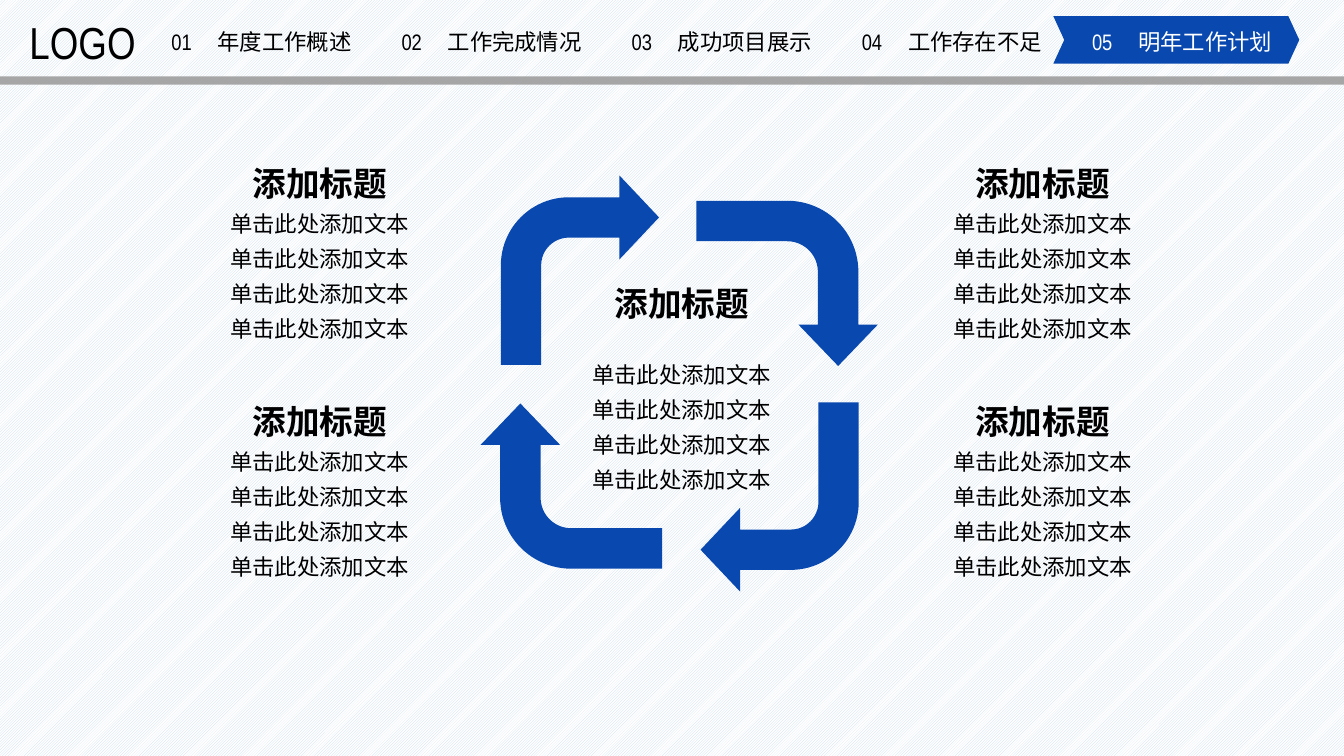
from itertools import product
from lxml.etree import SubElement
from pptx import Presentation
from pptx.dml.color import RGBColor as RGB
from pptx.enum.dml import MSO_PATTERN as Pattern
from pptx.enum.shapes import MSO_SHAPE as Shape
from pptx.enum.text import MSO_ANCHOR as Anchor, MSO_AUTO_SIZE as Fit, PP_ALIGN as Align
from pptx.oxml.ns import qn
from pptx.util import Pt

COLORS = {"blue": "0848AF", "gray": "A6A6A6", "sky": "C6D9F1",
          "white": "FFFFFF", "black": "000000"}
LATIN, HAN = "Arial Narrow", "Noto Sans CJK SC"
TABS = ["年度工作概述", "工作完成情况", "成功项目展示", "工作存在不足", "明年工作计划"]
TITLE, LINE = "添加标题", "单击此处添加文本"


def color(name):
    return RGB.from_string(COLORS[name])


def add_run(para, text, size, face=HAN, tint="black", bold=False):
    run = para.add_run()
    run.text = text
    font = run.font
    font.size, font.bold = Pt(size), bold
    font.color.rgb = color(tint)
    font.name = face
    SubElement(font._element, qn("a:ea"), typeface=face)


def add_box(slide, x, y, w, h, pad=(0, 0), anchor=Anchor.MIDDLE):
    """Add an empty text box and return its frame."""
    frame = slide.shapes.add_textbox(Pt(x), Pt(y), Pt(w), Pt(h)).text_frame
    frame.word_wrap = True
    frame.auto_size = Fit.SHAPE_TO_FIT_TEXT
    frame.vertical_anchor = anchor
    frame.margin_left = frame.margin_right = Pt(pad[0])
    frame.margin_top = frame.margin_bottom = Pt(pad[1])
    return frame


def add_form(slide, kind, x, y, w, h, tint, turn=0, adjust=()):
    form = slide.shapes.add_shape(kind, Pt(x), Pt(y), Pt(w), Pt(h))
    form.shadow.inherit = False
    form.fill.solid()
    form.fill.fore_color.rgb = color(tint)
    form.line.fill.background()
    form.rotation = turn
    for i, value in enumerate(adjust):
        form.adjustments[i] = value


def add_tab(slide, x, y, num, label, tint):
    para = add_box(slide, x, y, 143, 19.4).paragraphs[0]
    stops = SubElement(para._p.get_or_add_pPr(), qn("a:tabLst"))
    SubElement(stops, qn("a:tab"), pos=str(Pt(33)), algn="l")
    add_run(para, f"{num:02d}\t", 16, LATIN, tint)
    add_run(para, label, 16, HAN, tint)


def add_header(slide, x, y, w, active):
    """Draw the logo word, the section tabs and the rule below them."""
    add_form(slide, Shape.RECTANGLE, x, y + 54.6, w, 5.8, "gray")
    add_form(slide, Shape.CHEVRON, x + 752.4, y + 11.5, 175.7, 34, "blue", adjust=[0.23])
    logo = add_box(slide, x + 21, y + 11, 79, 38)
    add_run(logo.paragraphs[0], "LOGO", 32, LATIN)
    for i, label in enumerate(TABS):
        tint = "white" if i == active else "black"
        add_tab(slide, x + 122.4 + 164.4 * i, y + 20.2, i + 1, label, tint)


def add_cycle(slide, x, y):
    """Draw four bent arrows that turn clockwise."""
    tall = (113, 135.2, [0.255, 0.265, 0.25, 0.43])
    wide = (118, 129.6, [0.245, 0.24, 0.25, 0.43])
    spots = [(8.6, 0, tall), (154, 12.2, wide), (151.2, 162, tall), (0, 157, wide)]
    for i, (dx, dy, (w, h, adjust)) in enumerate(spots):
        add_form(slide, Shape.BENT_ARROW, x + dx, y + dy, w, h, "blue", 90 * i, adjust)


def add_note(slide, x, y, drop=28):
    """Add a title and, at the given drop below its top, four lines."""
    pad = (10, 5)
    head = add_box(slide, x + 23, y, 143, 38, pad, Anchor.TOP).paragraphs[0]
    head.alignment = Align.CENTER
    add_run(head, TITLE, 24, bold=True)
    body = add_box(slide, x, y + drop, 189, 109.4, pad, Anchor.TOP)
    for i in range(4):
        para = body.add_paragraph() if i else body.paragraphs[0]
        para.alignment = Align.CENTER
        para.line_spacing = 1.3
        add_run(para, LINE, 16)


def main():
    deck = Presentation()
    deck.slide_width, deck.slide_height = Pt(960), Pt(540)
    slide = deck.slides.add_slide(deck.slide_layouts[6])
    back = slide.background.fill
    back.patterned()
    back.pattern = Pattern.LIGHT_UPWARD_DIAGONAL
    back.fore_color.rgb = color("sky")
    back.back_color.rgb = color("white")
    add_header(slide, 0, 0, 960, active=4)
    add_cycle(slide, 349.2, 125.4)
    add_note(slide, 392.4, 197.4, drop=49.6)
    for x, y in product((133.8, 650.2), (111.6, 281.6)):
        add_note(slide, x, y)
    deck.save("out.pptx")


if __name__ == "__main__":
    main()
